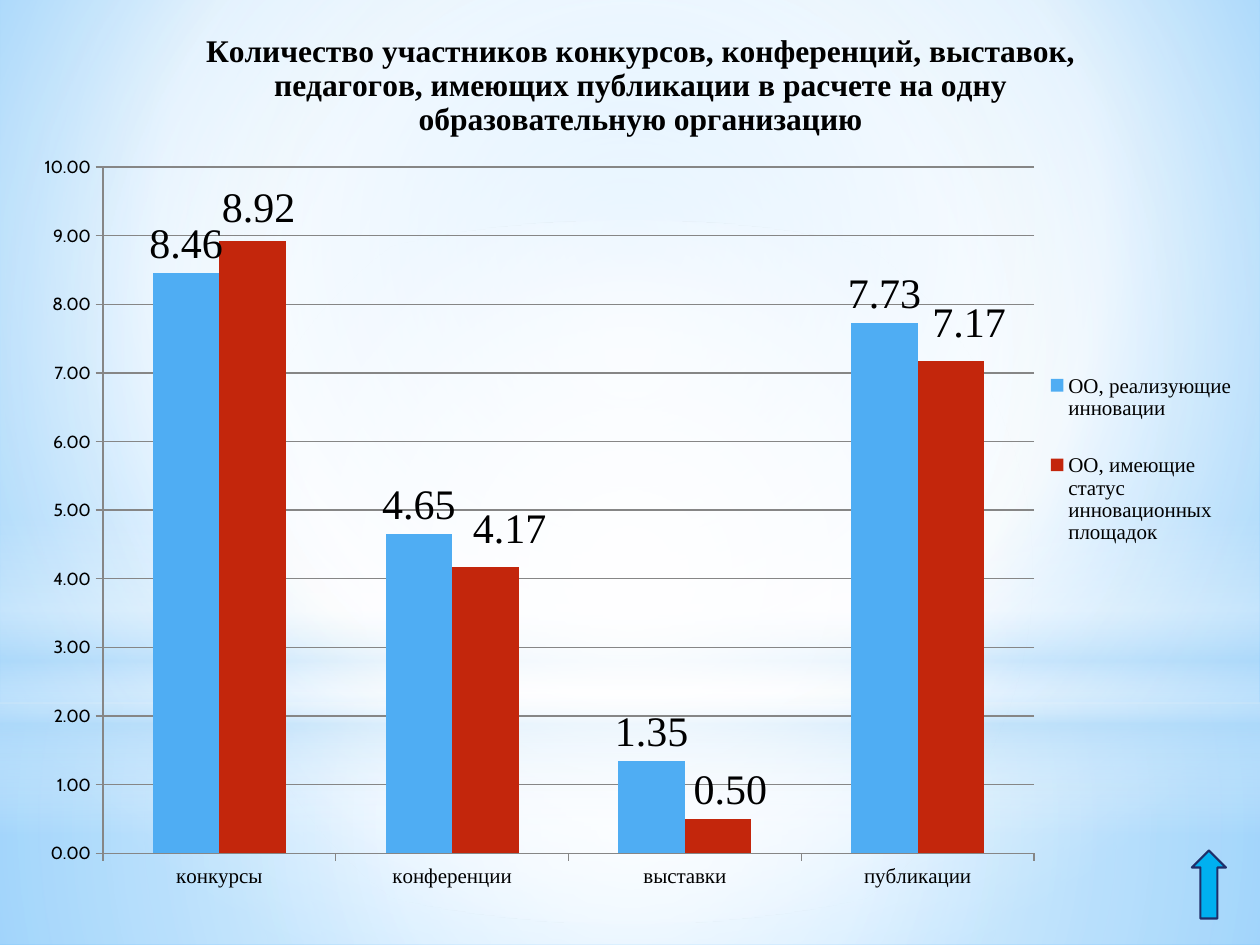
from dataclasses import dataclass

from pptx import Presentation
from pptx import util as u
from pptx.chart.data import CategoryChartData
from pptx.dml.color import RGBColor
from pptx.enum import chart as ch, shapes as sh
from pptx.oxml import parse_xml
from pptx.oxml.ns import nsdecls, qn

WIDE, HIGH = u.Inches(10), u.Inches(7.5)
SKY = RGBColor(0x4F, 0xAD, 0xF3)
RED = RGBColor(0xC3, 0x26, 0x0C)
CYAN = RGBColor(0x00, 0xB0, 0xF0)
NAVY = RGBColor(0x1F, 0x2E, 0x69)
GREY = RGBColor(0x86, 0x86, 0x86)
BLACK = RGBColor(0, 0, 0)
WHITE = RGBColor(0xFF, 0xFF, 0xFF)
PALE = RGBColor(0xB4, 0xDC, 0xFA)
LIGHT = RGBColor(0x9E, 0xD5, 0xFF)
BLUE = RGBColor(0x5B, 0xB9, 0xFF)
SERIF, SANS = "Times New Roman", "Cabin"
ROUND = '<a:path path="circle"><a:fillToRect l="{}" t="{}" r="{}" b="{}"/></a:path>'
MID = ROUND.format(*[50000] * 4)
DOWN = '<a:lin ang="5400000" scaled="0"/>'


@dataclass
class Stop:
    """A gradient stop with place and opacity in percent."""
    pos: int
    color: RGBColor
    alpha: int = 100


@dataclass
class Glow:
    """A backdrop band, placed in shares of the slide height."""
    kind: sh.MSO_SHAPE
    top: float
    tall: float
    stops: list[Stop]
    way: str = MID


@dataclass
class Group:
    """A chart series with its label shifts in shares of the chart."""
    name: str
    vals: tuple[float, ...]
    color: RGBColor
    shifts: tuple[tuple[float, float], ...] = ()


GLOWS = [
    Glow(sh.MSO_SHAPE.RECTANGLE, 0.744, 0.256,
         [Stop(0, WHITE, 91), Stop(37, WHITE, 76), Stop(100, PALE, 79)]),
    Glow(sh.MSO_SHAPE.RECTANGLE, 0, 0.744,
         [Stop(0, WHITE, 89), Stop(48, WHITE, 62), Stop(100, PALE, 79)]),
    Glow(sh.MSO_SHAPE.RECTANGLE, 0.549, 0.333,
         [Stop(0, WHITE, 0), Stop(29, WHITE, 30), Stop(45, PALE, 40),
          Stop(55, WHITE, 26), Stop(65, PALE, 60), Stop(100, WHITE, 0)], DOWN),
    Glow(sh.MSO_SHAPE.OVAL, 0.233, 0.744, [Stop(0, WHITE), Stop(56, WHITE, 0)]),
]
CATS = ("конкурсы", "конференции", "выставки", "публикации")
GROUPS = [
    Group("ОО, реализующие инновации", (8.46, 4.65, 1.35, 7.73), SKY),
    Group("ОО, имеющие статус инновационных площадок", (8.92, 4.17, 0.5, 7.17), RED,
          ((0.005, -0.005), (0.02, -0.01), (0.01, 0), (0.015, -0.01))),
]
TITLE = ("Количество участников конкурсов, конференций, выставок, педагогов, "
         "имеющих публикации в расчете на одну образовательную организацию")


def blend(root, stops: list[Stop], way: str) -> None:
    """Swap the first solid fill under root for a gradient."""
    marks = "".join(
        f'<a:gs pos="{s.pos * 1000}"><a:srgbClr val="{s.color}">'
        f'<a:alpha val="{s.alpha * 1000}"/></a:srgbClr></a:gs>' for s in stops)
    old = next(root.iter(qn("a:solidFill")))
    old.getparent().replace(old, parse_xml(
        f'<a:gradFill {nsdecls("a")} rotWithShape="1"><a:gsLst>{marks}</a:gsLst>{way}</a:gradFill>'))


def place(node, spot: int, box: tuple[float, ...], inner: bool = False) -> None:
    """Give a chart part a manual layout as its child number spot."""
    for old in node.findall(qn("c:layout")):
        node.remove(old)
    tags = [("layoutTarget", "inner")] if inner else []
    if len(box) == 4:
        tags += [("xMode", "edge"), ("yMode", "edge")]
    tags += zip("xywh", box)
    body = "".join(f'<c:{tag} val="{val}"/>' for tag, val in tags)
    node.insert(spot, parse_xml(
        f'<c:layout {nsdecls("c")}><c:manualLayout>{body}</c:manualLayout></c:layout>'))


def style(font, size: float, face: str = SERIF, bold: bool = False) -> None:
    """Set the size, face, weight and colour of a font."""
    font.size, font.name, font.bold = u.Pt(size), face, bold
    font.color.rgb = BLACK


def glow(slide, item: Glow) -> None:
    """Draw one backdrop band."""
    shape = slide.shapes.add_shape(item.kind, 0, int(HIGH * item.top), WIDE, int(HIGH * item.tall))
    shape.shadow.inherit = False
    shape.line.fill.background()
    shape.fill.solid()
    blend(shape._element, item.stops, item.way)


def dress(series, item: Group) -> None:
    """Colour a series and place its labels."""
    series.format.fill.solid()
    series.format.fill.fore_color.rgb = item.color
    series.invert_if_negative = False
    labels = series.data_labels
    labels.show_value = True
    labels.number_format, labels.number_format_is_linked = "0.00", False
    labels.position = ch.XL_LABEL_POSITION.OUTSIDE_END
    style(labels.font, 24)
    for i, shift in enumerate(item.shifts):
        label = series.points[i].data_label
        style(label.font, 24)
        label.position = ch.XL_LABEL_POSITION.OUTSIDE_END
        place(labels._element.findall(qn("c:dLbl"))[i], 1, shift)


def plot(slide) -> None:
    """Draw the column chart."""
    data = CategoryChartData(number_format="0.00")
    data.categories = CATS
    for item in GROUPS:
        data.add_series(item.name, item.vals)
    chart = slide.shapes.add_chart(
        ch.XL_CHART_TYPE.COLUMN_CLUSTERED, int(WIDE * 0.028), 0,
        int(WIDE * 0.961), int(HIGH * 0.972), data).chart
    style(chart.font, 10, SANS)
    chart.has_title = True
    run = chart.chart_title.text_frame.paragraphs[0].add_run()
    run.text = TITLE
    style(run.font, 18, bold=True)
    chart.chart_title.include_in_layout = False
    chart.has_legend = True
    chart.legend.position = ch.XL_LEGEND_POSITION.RIGHT
    chart.legend.include_in_layout = False
    style(chart.legend.font, 12)
    place(chart.legend._element, 1, (0.84, 0.37, 0.15, 0.26))
    place(chart._chartSpace.chart.plotArea, 0, (0.056, 0.182, 0.769, 0.747), inner=True)
    bars = chart.plots[0]
    bars.gap_width, bars.overlap, bars.vary_by_categories = 150, 0, False
    for series, item in zip(bars.series, GROUPS):
        dress(series, item)
    cat, val = chart.category_axis, chart.value_axis
    style(cat.tick_labels.font, 12)
    style(val.tick_labels.font, 10, SANS)
    val.minimum_scale, val.maximum_scale, val.major_unit = 0, 10, 1
    val.tick_labels.number_format = "0.00"
    val.tick_labels.number_format_is_linked = False
    val.has_major_gridlines = True
    for axis in (cat, val):
        axis.major_tick_mark = ch.XL_TICK_MARK.OUTSIDE
    for part in (cat, val, val.major_gridlines):
        part.format.line.color.rgb = GREY
        part.format.line.width = u.Pt(0.75)


def arrow(slide) -> None:
    """Draw the up arrow in the corner."""
    shape = slide.shapes.add_shape(
        sh.MSO_SHAPE.UP_ARROW, int(WIDE * 0.946), int(HIGH * 0.9),
        int(WIDE * 0.027), int(HIGH * 0.072))
    shape.shadow.inherit = False
    shape.fill.solid()
    shape.fill.fore_color.rgb = CYAN
    shape.line.color.rgb = NAVY
    shape.line.width = u.Pt(1.25)


def main() -> None:
    """Build and save the slide."""
    deck = Presentation()
    deck.slide_width, deck.slide_height = WIDE, HIGH
    slide = deck.slides.add_slide(deck.slide_layouts[6])
    slide.background.fill.solid()
    blend(slide._element, [Stop(0, LIGHT), Stop(60, WHITE), Stop(100, BLUE)],
          ROUND.format(20000, 10000, 20000, 60000))
    for item in GLOWS:
        glow(slide, item)
    plot(slide)
    arrow(slide)
    deck.save("out.pptx")


if __name__ == "__main__":
    main()
